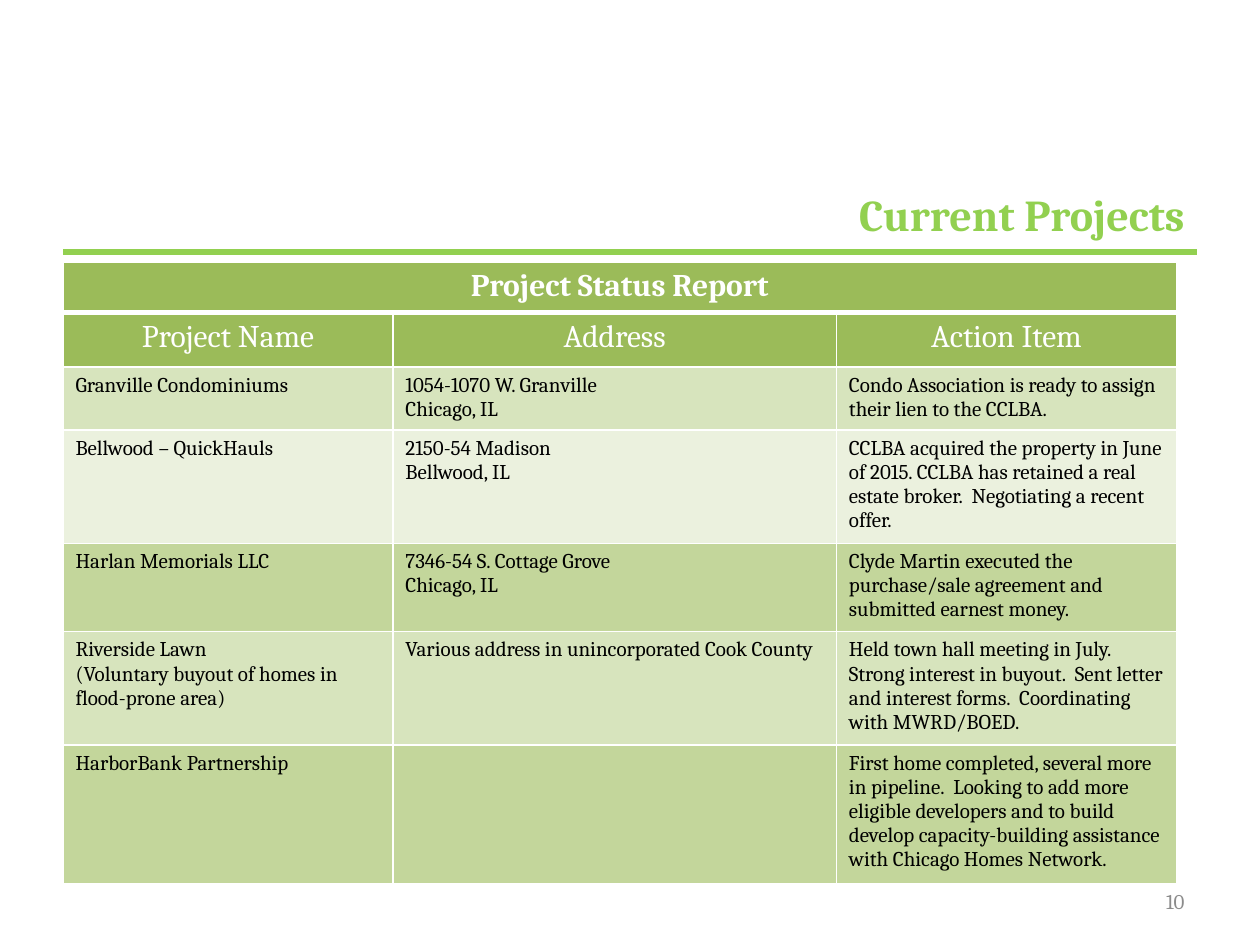
from lxml import etree
from pptx import Presentation
from pptx import util as u
from pptx.dml.color import RGBColor
from pptx.enum import shapes, text
from pptx.oxml import ns

COLORS = {
    "accent": "92D050", "header": "9BBB59", "white": "FFFFFF", "black": "000000",
    "light": "D7E4BD", "pale": "EBF1DE", "medium": "C3D69B", "number": "8C8C8C",
}
COLUMN_WIDTHS = [6.65, 8.94, 6.86]
ROW_HEIGHTS = [1, 1.1, 1.27, 2.23, 1.74, 2.23, 2.68]
HEADINGS = ["Project Name", "Address", "Action Item"]
PROJECTS = [
    ("light", "Granville Condominiums", "1054-1070 W. Granville\nChicago, IL",
     "Condo Association is ready to assign their lien to the CCLBA."),
    ("pale", "Bellwood – QuickHauls", "2150-54 Madison\nBellwood, IL",
     "CCLBA acquired the property in June of 2015. CCLBA has retained a real "
     "estate broker.  Negotiating a recent offer."),
    ("medium", "Harlan Memorials LLC", "7346-54 S. Cottage Grove\nChicago, IL",
     "Clyde Martin executed the purchase/sale agreement and submitted earnest money."),
    ("light", "Riverside Lawn\n(Voluntary buyout of homes in flood-prone area)",
     "Various address in unincorporated Cook County",
     "Held town hall meeting in July.  Strong interest in buyout.  Sent letter "
     "and interest forms.  Coordinating with MWRD/BOED."),
    ("medium", "HarborBank Partnership", "",
     "First home completed, several more in pipeline.  Looking to add more "
     "eligible developers and to build develop capacity-building assistance "
     "with Chicago Homes Network."),
]


def color(name):
    return RGBColor.from_string(COLORS[name])


def write(frame, content, size=12, fill="black", bold=False, align=text.PP_ALIGN.LEFT):
    frame.word_wrap = True
    frame.text = content
    for para in frame.paragraphs:
        para.alignment = align
        para.font.size = u.Pt(size)
        for span in para.runs:
            span.font.name = "Cambria"
            span.font.size = u.Pt(size)
            span.font.bold = bold
            span.font.color.rgb = color(fill)


class SlideBuilder:
    """Hold the slide style and add each kind of element to the current page."""

    def __init__(self, deck):
        self.page = deck.slides.add_slide(deck.slide_layouts[6])

    def rule(self, left, top, right):
        line = self.page.shapes.add_connector(
            shapes.MSO_CONNECTOR.STRAIGHT, u.Cm(left), u.Cm(top), u.Cm(right), u.Cm(top))
        line.line.color.rgb = color("accent")
        line.line.width = u.Pt(3)
        etree.SubElement(line._element.spPr, ns.qn("a:effectLst"))

    def label(self, content, left, top, width, height, anchor, bottom=0.13, **style):
        box = self.page.shapes.add_textbox(u.Cm(left), u.Cm(top), u.Cm(width), u.Cm(height))
        frame = box.text_frame
        frame.vertical_anchor = anchor
        frame.margin_bottom = u.Cm(bottom)
        write(frame, content, align=text.PP_ALIGN.RIGHT, **style)

    def cell(self, cell, content, fill, top=1, bottom=1, **style):
        properties = cell._tc.get_or_add_tcPr()
        for side, width in zip("LRTB", (1, 1, top, bottom)):
            edge = etree.SubElement(properties, ns.qn(f"a:ln{side}"), w=str(u.Pt(width)))
            solid = etree.SubElement(edge, ns.qn("a:solidFill"))
            etree.SubElement(solid, ns.qn("a:srgbClr"), val=COLORS["white"])
        cell.fill.solid()
        cell.fill.fore_color.rgb = color(fill)
        write(cell.text_frame, content, **style)

    def table(self, left, top):
        table = self.page.shapes.add_table(
            len(ROW_HEIGHTS), len(COLUMN_WIDTHS), u.Cm(left), u.Cm(top),
            u.Cm(sum(COLUMN_WIDTHS)), u.Cm(sum(ROW_HEIGHTS))).table
        for column, width in zip(table.columns, COLUMN_WIDTHS):
            column.width = u.Cm(width)
        for row, height in zip(table.rows, ROW_HEIGHTS):
            row.height = u.Cm(height)
        heading = dict(size=18, fill="white", align=text.PP_ALIGN.CENTER)
        fill_style = {"size": heading["size"], "align": heading["align"]}
        table.cell(0, 0).merge(table.cell(0, 2))
        for index, title in enumerate(["Project Status Report", "", ""]):
            self.heading(table.cell(0, index), title, bottom=3, bold=True)
        for index, title in enumerate(HEADINGS):
            self.heading(table.cell(1, index), title, top=3)
        for row, (fill, *contents) in enumerate(PROJECTS, start=2):
            for index, content in enumerate(contents):
                self.cell(table.cell(row, index), content, fill)

    def heading(self, cell, content, **style):
        self.cell(cell, content, "header", size=18, align=text.PP_ALIGN.CENTER, **style)
        for para in cell.text_frame.paragraphs:
            for span in para.runs:
                span.font.color.rgb = color("white")


def main():
    deck = Presentation()
    deck.slide_width, deck.slide_height = u.Cm(25.4), u.Cm(19.05)
    builder = SlideBuilder(deck)
    builder.rule(1.27, 5.08, 24.13)
    builder.label("Current Projects", 1.27, 2.54, 22.86, 2.54, text.MSO_ANCHOR.BOTTOM,
                  bottom=0.23, size=25.2, fill="accent", bold=True)
    builder.table(1.27, 5.28)
    builder.label("10", 18.21, 17.65, 5.92, 1.02, text.MSO_ANCHOR.MIDDLE, fill="number")
    deck.save("out.pptx")


if __name__ == "__main__":
    main()
